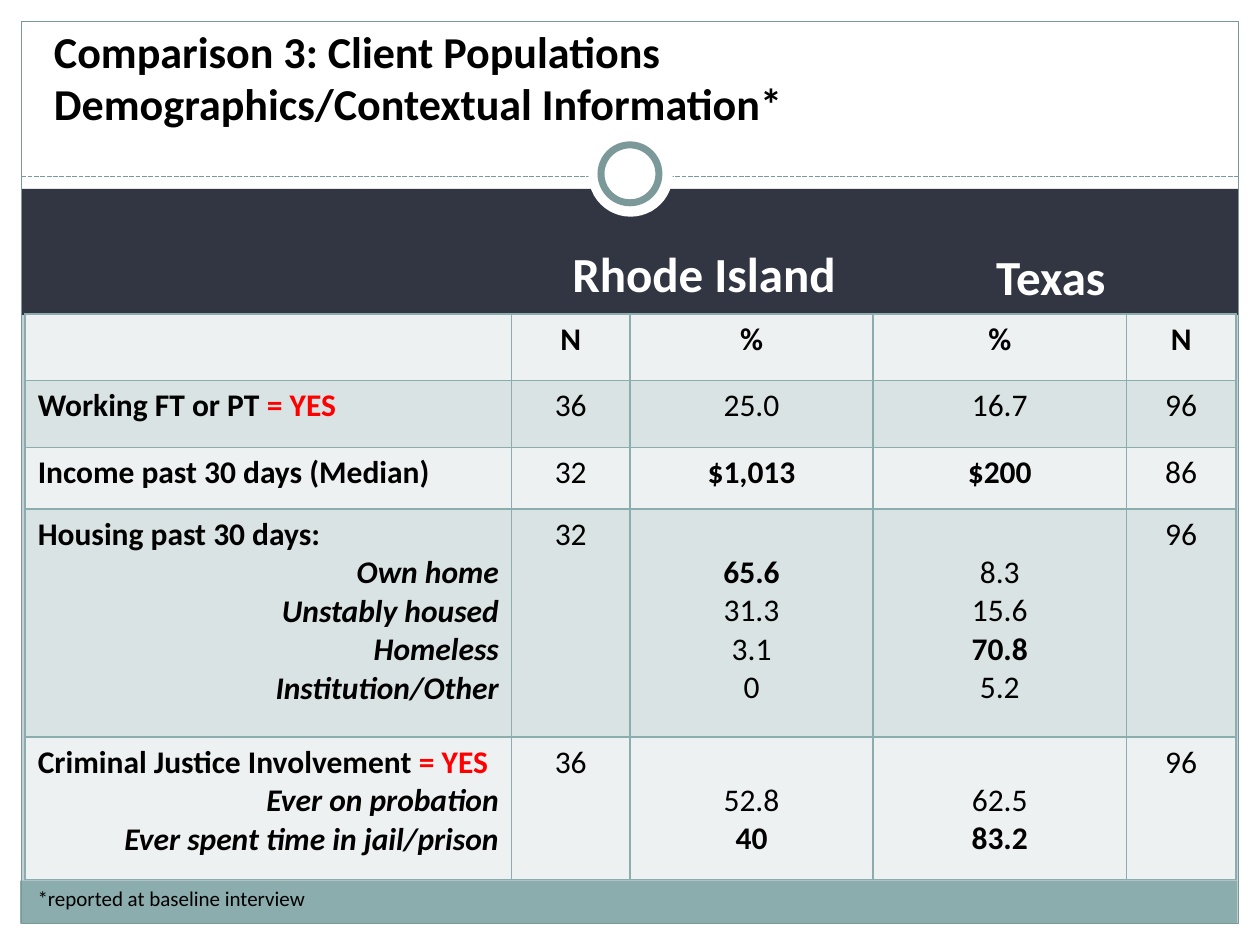
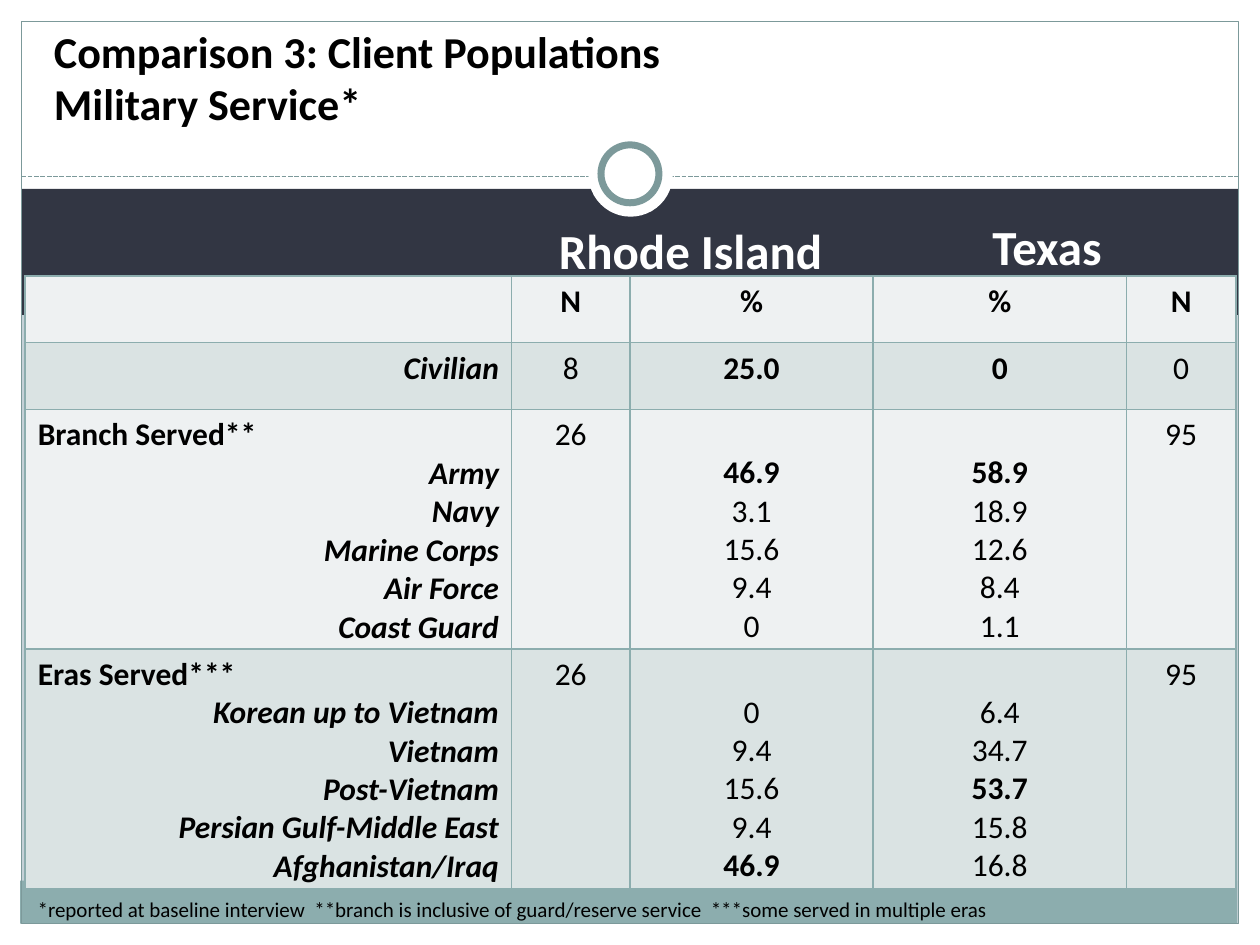
from dataclasses import dataclass

from lxml import etree
from pptx import Presentation
from pptx.dml.color import RGBColor
from pptx.enum.dml import MSO_LINE
from pptx.enum.shapes import MSO_CONNECTOR, MSO_SHAPE
from pptx.enum.text import MSO_ANCHOR, PP_ALIGN
from pptx.oxml.ns import qn
from pptx.util import Inches, Pt

RECT, OVAL = MSO_SHAPE.RECTANGLE, MSO_SHAPE.OVAL
STRAIGHT = MSO_CONNECTOR.STRAIGHT
DASH = MSO_LINE.SQUARE_DOT
LEFT, CENTER, RIGHT = PP_ALIGN.LEFT, PP_ALIGN.CENTER, PP_ALIGN.RIGHT
TOP, MIDDLE, BOTTOM = MSO_ANCHOR.TOP, MSO_ANCHOR.MIDDLE, MSO_ANCHOR.BOTTOM

BACKDROP = RGBColor(0xC5, 0xD1, 0xD7)
WHITE = RGBColor(0xFF, 0xFF, 0xFF)
BLACK = RGBColor(0, 0, 0)
RED = RGBColor(0xFF, 0, 0)
NAVY = RGBColor(0x32, 0x36, 0x43)
TEAL = RGBColor(0x8C, 0xAD, 0xAE)
FRAME = RGBColor(0x7C, 0x99, 0x9A)
ROW_FILLS = (RGBColor(0xEE, 0xF1, 0xF2), RGBColor(0xDA, 0xE3, 0xE3))

FONT = "Calibri"
COL_WIDTHS = (3.86, 0.94, 1.93, 2.01, 0.87)
TABLE_LEFT = 0.2
CELL_TOP, CELL_BOTTOM = 0.05, 0.02
LINE_HEIGHT = 0.3


@dataclass
class Row:
    height: float
    heading: str = ""
    flag: str = ""
    items: tuple = ()
    ri_n: str = ""
    ri: tuple = ()
    tx: tuple = ()
    tx_n: str = ""
    bold: tuple = ()


HEADER = Row(0.53, ri_n="N", ri=("%",), tx=("%",), tx_n="N", bold=("N", "%"))

DEMOGRAPHICS = (
    HEADER,
    Row(0.53, "Working FT or PT ", "= YES", (), "36", ("25.0",), ("16.7",), "96"),
    Row(0.49, "Income past 30 days (Median)", "", (), "32",
        ("$1,013",), ("$200",), "86", ("$1,013", "$200")),
    Row(1.81, "Housing past 30 days:", "",
        ("Own home", "Unstably housed", "Homeless", "Institution/Other"), "32",
        ("65.6", "31.3", "3.1", "0"), ("8.3", "15.6", "70.8", "5.2"), "96",
        ("65.6", "70.8")),
    Row(1.13, "Criminal Justice Involvement ", "= YES",
        ("Ever on probation", "Ever spent time in jail/prison"), "36",
        ("52.8", "40"), ("62.5", "83.2"), "96", ("40", "83.2")),
)

MILITARY = (
    HEADER,
    Row(0.53, items=("Civilian",), ri_n="8", ri=("25.0",), tx=("0",), tx_n="0",
        bold=("25.0",)),
    Row(1.9, "Branch Served**", "",
        ("Army", "Navy", "Marine Corps", "Air Force", "Coast Guard"), "26",
        ("46.9", "3.1", "15.6", "9.4", "0"),
        ("58.9", "18.9", "12.6", "8.4", "1.1"), "95", ("46.9", "58.9")),
    Row(1.9, "Eras Served***", "",
        ("Korean up to Vietnam", "Vietnam", "Post-Vietnam",
         "Persian Gulf-Middle East", "Afghanistan/Iraq"), "26",
        ("0", "9.4", "15.6", "9.4", "46.9"),
        ("6.4", "34.7", "53.7", "15.8", "16.8"), "95", ("46.9", "53.7")),
)
CIVILIAN = MILITARY[1]


def add_run(p, text, size, color=BLACK, bold=False, italic=False):
    r = p.add_run()
    r.text = text
    f = r.font
    f.name, f.size, f.bold, f.italic = FONT, Pt(size), bold, italic
    f.color.rgb = color


def add_box(s, kind, box, fill=None, line=None, width=0.75):
    sp = s.shapes.add_shape(kind, *map(Inches, box))
    sp.shadow.inherit = False
    if fill is None:
        sp.fill.background()
    else:
        sp.fill.solid()
        sp.fill.fore_color.rgb = fill
    if line is None:
        sp.line.fill.background()
    else:
        sp.line.color.rgb = line
        sp.line.width = Pt(width)


def add_text(s, box, lines, size, color=BLACK, bold=False, align=LEFT,
             anchor=TOP, before=0):
    tf = s.shapes.add_textbox(*map(Inches, box)).text_frame
    tf.word_wrap = True
    tf.vertical_anchor = anchor
    p = tf.paragraphs[0]
    p.alignment = align
    p.space_before = Pt(before)
    for i, line in enumerate(lines):
        if i:
            p.add_line_break()
        add_run(p, line, size, color, bold)


def add_state(s, name, box, align=CENTER):
    add_text(s, box, [name], 28, WHITE, True, align, MIDDLE, before=5.6)


def add_dashed_rule(s, left, right, y):
    c = s.shapes.add_connector(STRAIGHT, Inches(left), Inches(y), Inches(right), Inches(y))
    c.line.color.rgb = FRAME
    c.line.width = Pt(0.9)
    c.line.dash_style = DASH
    etree.SubElement(c._element.spPr, qn("a:effectLst"))


def add_base(prs, title):
    s = prs.slides.add_slide(prs.slide_layouts[6])
    s.background.fill.solid()
    s.background.fill.fore_color.rgb = BACKDROP
    for box in ((0, 0, 10, 1.58), (0, 7.33, 10, 0.17),
                (0, 0, 0.17, 7.5), (9.83, 0, 0.17, 7.5)):
        add_box(s, RECT, box, WHITE)
    add_box(s, RECT, (0.17, 1.5, 9.66, 1), NAVY)
    add_box(s, RECT, (0.16, 6.99, 9.66, 0.34), TEAL)
    add_dashed_rule(s, 0.17, 9.83, 1.4)
    add_box(s, RECT, (0.17, 0.17, 9.66, 7.16), line=FRAME)
    add_box(s, OVAL, (4.67, 1.05, 0.67, 0.67), WHITE)
    add_box(s, OVAL, (4.77, 1.15, 0.46, 0.46), WHITE, FRAME, 4)
    add_text(s, (0.33, 0.25, 9.33, 0.83), ["Comparison 3: Client Populations", title],
             25.2, bold=True, anchor=BOTTOM)
    return s


def style_cell(cell, fill):
    tcPr = cell._tc.get_or_add_tcPr()
    for side in ("a:lnL", "a:lnR", "a:lnT", "a:lnB"):
        ln = etree.SubElement(tcPr, qn(side), w=str(Pt(1)))
        solid = etree.SubElement(ln, qn("a:solidFill"))
        etree.SubElement(solid, qn("a:srgbClr"), val=str(TEAL))
    cell.fill.solid()
    cell.fill.fore_color.rgb = fill
    cell.margin_top, cell.margin_bottom = Inches(CELL_TOP), Inches(CELL_BOTTOM)


def next_paragraph(tf, align):
    p = tf.paragraphs[0]
    if p.runs:
        p = tf.add_paragraph()
    p.alignment = align
    return p


def fill_label(cell, row):
    tf = cell.text_frame
    if row.heading:
        p = next_paragraph(tf, LEFT)
        add_run(p, row.heading, 18, bold=True)
        if row.flag:
            add_run(p, row.flag, 18, RED, bold=True)
    for item in row.items:
        add_run(next_paragraph(tf, RIGHT), item, 18, bold=True, italic=True)


def fill_values(cell, values, bold):
    for value in values:
        add_run(next_paragraph(cell.text_frame, CENTER), value, 18, bold=value in bold)


def add_data_table(s, top, rows):
    height = sum(row.height for row in rows)
    table = s.shapes.add_table(len(rows), len(COL_WIDTHS), Inches(TABLE_LEFT), Inches(top),
                               Inches(sum(COL_WIDTHS)), Inches(height)).table
    table.first_row = table.horz_banding = False
    for column, width in zip(table.columns, COL_WIDTHS):
        column.width = Inches(width)
    for i, row in enumerate(rows):
        table.rows[i].height = Inches(row.height)
        cells = list(table.rows[i].cells)
        for cell in cells:
            style_cell(cell, ROW_FILLS[i % 2])
        fill_label(cells[0], row)
        for cell, values in zip(cells[1:], ((row.ri_n,), row.ri, row.tx, (row.tx_n,))):
            bold = ("0",) + row.bold if row is CIVILIAN and values is row.tx else row.bold
            fill_values(cell, values, bold)
        if row.heading and row.items:
            for cell in cells[2:4]:
                cell.margin_top = Inches(CELL_TOP + LINE_HEIGHT)


def main():
    prs = Presentation()
    prs.slide_width, prs.slide_height = Inches(10), Inches(7.5)

    s = add_base(prs, "Demographics/Contextual Information*")
    add_state(s, "Rhode Island", (4.37, 1.85, 2.36, 0.64), RIGHT)
    add_state(s, "Texas", (7.35, 1.82, 1.98, 0.74))
    add_text(s, (0.2, 6.98, 6.54, 0.3), ["*reported at baseline interview"], 12)
    add_data_table(s, 2.49, DEMOGRAPHICS)

    s = add_base(prs, "Military Service*")
    add_state(s, "Rhode Island", (3.99, 1.62, 2.98, 0.72))
    add_state(s, "Texas", (7.36, 1.62, 1.9, 0.67))
    add_text(s, (0.2, 7.07, 9.61, 0.3),
             ["*reported at baseline interview  **branch is inclusive of guard/reserve "
              "service  ***some served in multiple eras"], 12)
    add_data_table(s, 2.19, MILITARY)

    prs.save("out.pptx")


if __name__ == "__main__":
    main()
